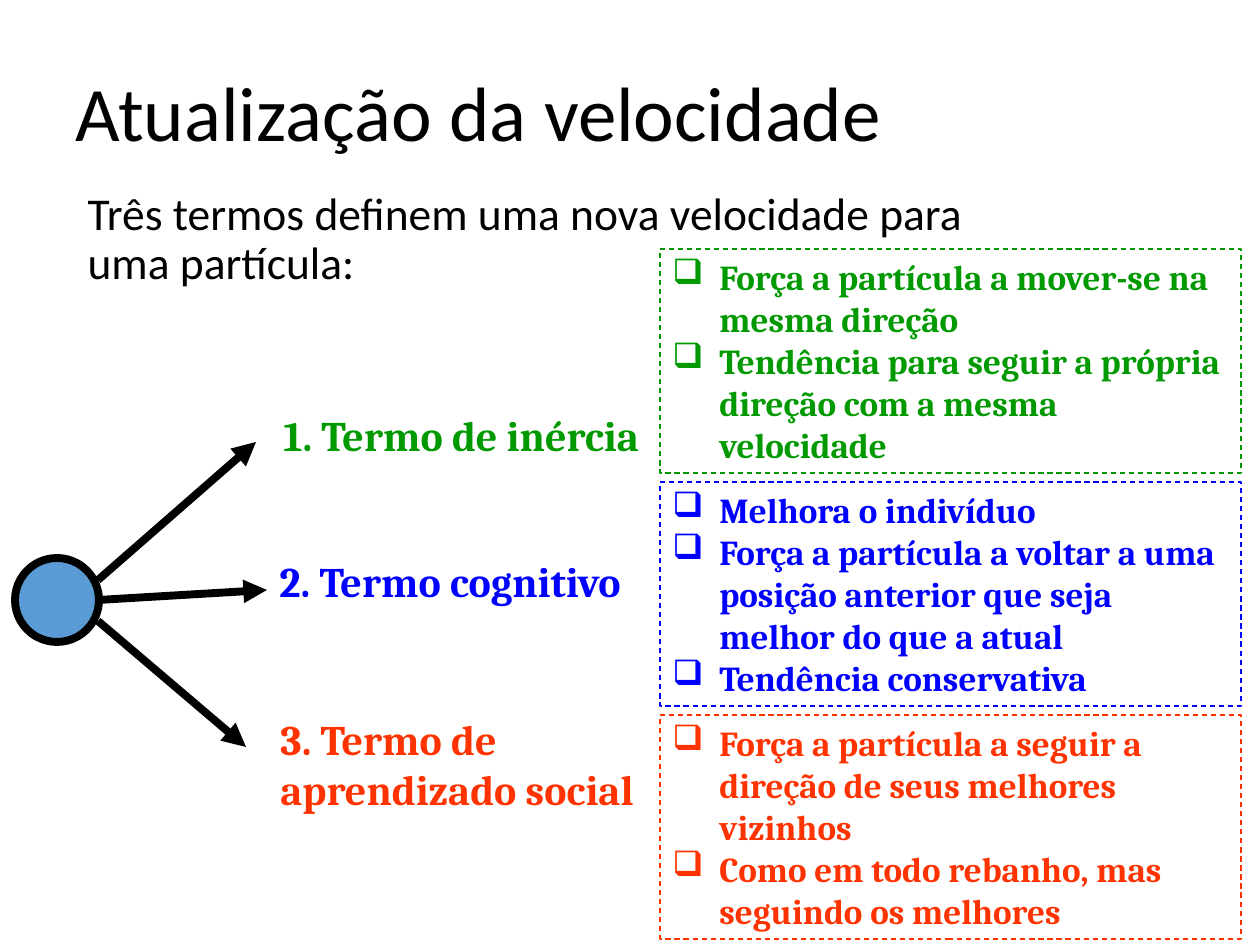
from pptx import Presentation
from pptx.dml.color import RGBColor
from pptx.enum.dml import MSO_LINE_DASH_STYLE as Dash
from pptx.enum.shapes import MSO_CONNECTOR as Link, MSO_SHAPE as Shape
from pptx.enum.text import MSO_ANCHOR as Anchor, MSO_AUTO_SIZE as Fit, PP_ALIGN as Align
from pptx.oxml.ns import qn
from pptx.util import Emu, Pt
from lxml.etree import SubElement as Sub

BLACK = RGBColor(0x00, 0x00, 0x00)
GREEN = RGBColor(0x00, 0x99, 0x00)
BLUE = RGBColor(0x00, 0x00, 0xFF)
RED = RGBColor(0xFF, 0x33, 0x00)
SKY = RGBColor(0x5B, 0x9B, 0xD5)

# colour, label lines, label place, arrow start, arrow tip, notes
TERMS = [
    (GREEN, ["1. Termo de inércia"], (271, 403, 392, 63), (98, 580), (256, 442),
     ["Força a partícula a mover-se na mesma direção",
      "Tendência para seguir a própria direção com a mesma velocidade"]),
    (BLUE, ["2. Termo cognitivo"], (267, 549, 384, 63), (98, 600), (267, 590),
     ["Melhora o indivíduo",
      "Força a partícula a voltar a uma posição anterior que seja melhor do que a atual",
      "Tendência conservativa"]),
    (RED, ["3. Termo de", "aprendizado social"], (268, 707, 386, 113), (98, 621), (246, 747),
     ["Força a partícula a seguir a direção de seus melhores vizinhos",
      "Como em todo rebanho, mas seguindo os melhores"]),
]
NOTE_TOP, NOTE_STEP = 249, 233


def px(n):
    return Emu(round(n * 914400 / 126))


class Board:
    TITLE = dict(name="Calibri", size=Pt(44), bold=False)
    INTRO = dict(name="Calibri", size=Pt(26), bold=False)
    LABEL = dict(name="Cambria", size=Pt(24), bold=True)
    NOTE = dict(name="Cambria", size=Pt(20), bold=True)

    def __init__(self, slide):
        self.slide = slide
        self.shapes = slide.shapes

    def words(self, frame, lines, style, color, bullet=None, indent=0, **form):
        """Fill the frame with one paragraph per line; a bullet hangs in the indent."""
        frame.auto_size = Fit.NONE
        for i, line in enumerate(lines):
            para = frame.paragraphs[0] if i == 0 else frame.add_paragraph()
            para.text = line
            props = para._p.get_or_add_pPr()
            props.set("marL", str(px(indent)))
            props.set("indent", str(-px(indent) if bullet else 0))
            if bullet:
                Sub(props, qn("a:buChar"), char=bullet)
            else:
                Sub(props, qn("a:buNone"))
            for key, val in dict(alignment=Align.LEFT, space_before=Pt(0), **form).items():
                setattr(para, key, val)
            for key, val in style.items():
                setattr(para.font, key, val)
            para.font.color.rgb = color

    def holder(self, index, place, text, style, anchor, indent=0):
        item = self.slide.placeholders[index]
        item.left, item.top, item.width, item.height = map(px, place)
        item.text_frame.vertical_anchor = anchor
        self.words(item.text_frame, [text], style, BLACK, indent=indent, line_spacing=0.9)

    def shape(self, kind, place, color, width):
        item = self.shapes.add_shape(kind, *map(px, place))
        item.shadow.inherit = False
        item.fill.background()
        item.line.color.rgb = color
        item.line.width = Pt(width)
        return item

    def dot(self, place):
        item = self.shape(Shape.OVAL, place, BLACK, 4.5)
        item.fill.solid()
        item.fill.fore_color.rgb = SKY

    def note(self, place, lines, color):
        item = self.shape(Shape.RECTANGLE, place, color, 0.75)
        item.line.dash_style = Dash.DASH
        item.text_frame.word_wrap = True
        item.text_frame.vertical_anchor = Anchor.TOP
        self.words(item.text_frame, lines, self.NOTE, color, "❑", 47)

    def label(self, place, lines, color):
        frame = self.shapes.add_textbox(*map(px, place)).text_frame
        frame.word_wrap = False
        self.words(frame, lines, self.LABEL, color)

    def arrow(self, start, tip):
        item = self.shapes.add_connector(Link.STRAIGHT, *map(px, start + tip))
        item.line.color.rgb = BLACK
        item.line.width = Pt(4.5)
        props = item._element.spPr
        Sub(props.find(qn("a:ln")), qn("a:tailEnd"), type="triangle")
        Sub(props, qn("a:effectLst"))


def main():
    deck = Presentation()
    deck.slide_width, deck.slide_height = px(1260), px(945)
    board = Board(deck.slides.add_slide(deck.slide_layouts[1]))
    board.holder(0, (63, 38, 1134, 157), "Atualização da velocidade",
                 board.TITLE, Anchor.MIDDLE)
    board.holder(1, (43, 185, 1013, 624),
                 "Três termos definem uma nova velocidade para uma partícula:",
                 board.INTRO, Anchor.TOP, 32)
    board.dot((15, 558, 84, 84))
    for i, (color, name, place, start, tip, notes) in enumerate(TERMS):
        board.arrow(start, tip)
        board.label(place, name, color)
        board.note((660, NOTE_TOP + i * NOTE_STEP, 581, 224), notes, color)
    deck.save("out.pptx")


if __name__ == "__main__":
    main()
